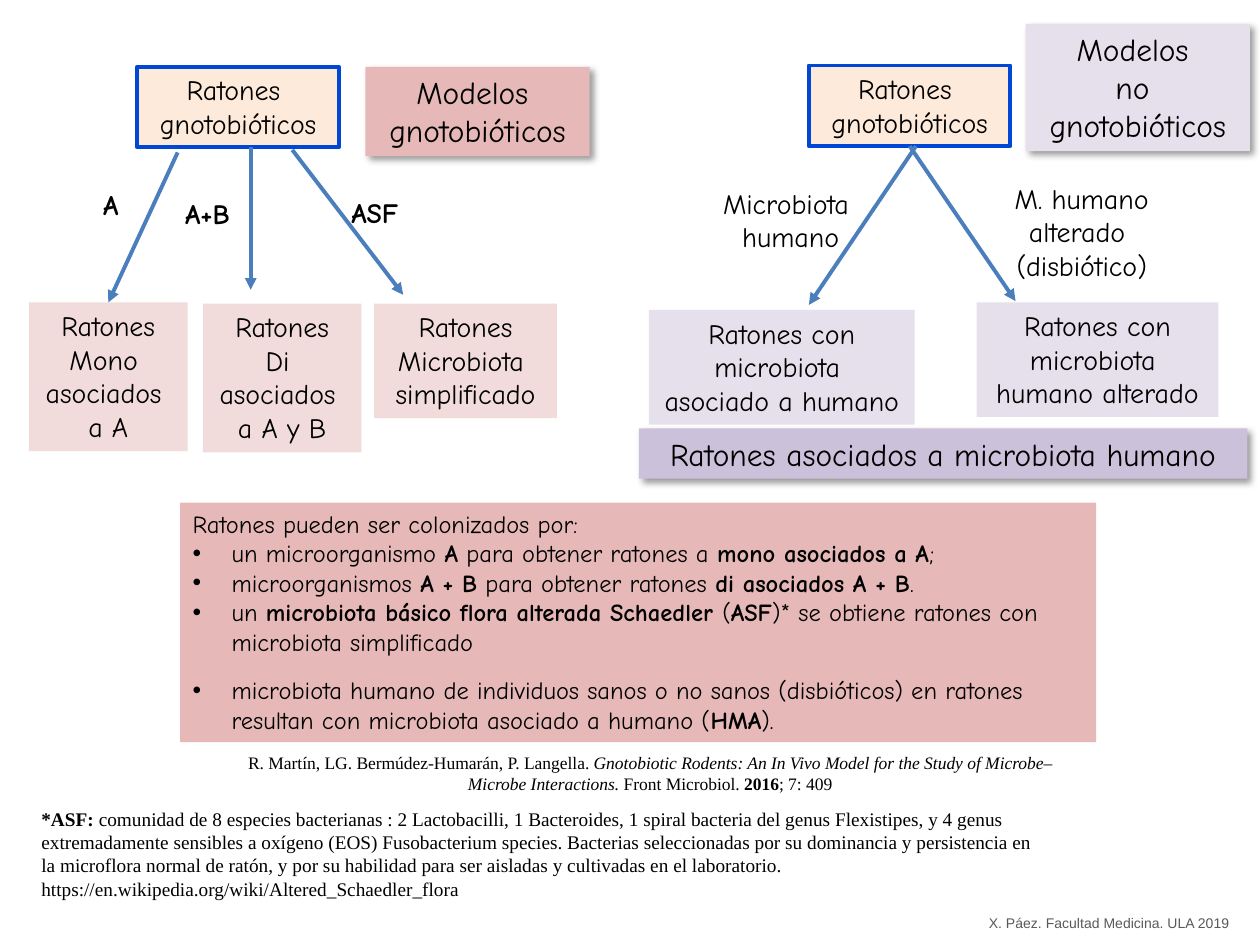
"""Build the slide on gnotobiotic and non-gnotobiotic mouse models."""
from dataclasses import dataclass
from typing import Any, Optional

import lxml.etree
import pptx
import pptx.dml.color
import pptx.enum.shapes
import pptx.enum.text
import pptx.oxml.ns
import pptx.util

Inches = pptx.util.Inches
Pt = pptx.util.Pt
qn = pptx.oxml.ns.qn
ALIGN = pptx.enum.text.PP_ALIGN
HUES = {
    "black": "000000", "gray": "595959", "rose": "E6B9B8", "pink": "F2DCDB",
    "peach": "FDEADA", "lilac": "E6E0EC", "purple": "CCC1DA",
    "edge": "0047D6", "arrow": "4B7EBC",
}
COMIC = "Comic Neue"
TIMES = "Times New Roman"


@dataclass(frozen=True)
class Box:
    """A block of text; bars mark bold runs and tildes mark italic runs."""
    x: float
    y: float
    w: float
    h: float
    lines: tuple[str, ...]
    fill: Optional[str] = None
    edge: Optional[str] = None
    size: int = 16
    font: str = COMIC
    hue: str = "black"
    mid: bool = True
    wrap: bool = False
    shade: bool = False


@dataclass(frozen=True)
class Arrow:
    """An arrow with the boxes it may be joined to."""
    x1: float
    y1: float
    x2: float
    y2: float
    start: Optional[Box] = None
    end: Optional[Box] = None


def tint(name: str) -> pptx.dml.color.RGBColor:
    """Look up a colour by name."""
    return pptx.dml.color.RGBColor.from_string(HUES[name])


def apply(thing: Any, form: dict[str, Any]) -> None:
    """Set each format value on the thing."""
    for key, value in form.items():
        setattr(thing, key, value)


def add(node: Any, tag: str, **values: Any) -> Any:
    """Append an XML child with its attributes."""
    child = lxml.etree.SubElement(node, qn(tag))
    for key, value in values.items():
        child.set(key, str(value))
    return child


def cast(shape: Any) -> None:
    """Give the shape a soft shadow to the lower right."""
    glow = shape._element.spPr.find(qn("a:effectLst"))
    outer = add(glow, "a:outerShdw", blurRad=Pt(4), dist=Pt(3),
                dir=45 * 60000, algn="tl", rotWithShape=0)
    add(add(outer, "a:srgbClr", val=HUES["black"]), "a:alpha", val=40000)


def write(para: Any, line: str, box: Box) -> None:
    """Write one marked line into a paragraph."""
    if line.startswith("•"):
        props = para._p.get_or_add_pPr()
        apply_ind = {"marL": Inches(0.31), "indent": -Inches(0.31)}
        for key, value in apply_ind.items():
            props.set(key, str(value))
        add(props, "a:buFont", typeface="Arial")
        add(props, "a:buChar", char="•")
        line = line[1:]
    para.alignment = ALIGN.CENTER if box.mid else ALIGN.LEFT
    for i, part in enumerate(line.split("|")):
        for j, text in enumerate(part.split("~")):
            if text:
                run = para.add_run()
                run.text = text
                apply(run.font, {"name": box.font, "size": Pt(box.size),
                                 "bold": i % 2 == 1, "italic": j % 2 == 1})
                run.font.color.rgb = tint(box.hue)


def draw(slide: Any, box: Box) -> Any:
    """Draw a box, filled or plain, with its text."""
    place = [Inches(n) for n in (box.x, box.y, box.w, box.h)]
    if box.fill:
        kind = pptx.enum.shapes.MSO_SHAPE.RECTANGLE
        shape = slide.shapes.add_shape(kind, *place)
        shape.shadow.inherit = False
        shape.fill.solid()
        shape.fill.fore_color.rgb = tint(box.fill)
        if box.edge:
            shape.line.color.rgb = tint(box.edge)
            shape.line.width = Pt(2.25)
        else:
            shape.line.fill.background()
        if box.shade:
            cast(shape)
    else:
        shape = slide.shapes.add_textbox(*place)
    frame = shape.text_frame
    apply(frame, {
        "word_wrap": box.wrap,
        "auto_size": pptx.enum.text.MSO_AUTO_SIZE.SHAPE_TO_FIT_TEXT,
        "vertical_anchor": pptx.enum.text.MSO_ANCHOR.TOP,
    })
    for n, line in enumerate(box.lines):
        write(frame.add_paragraph() if n else frame.paragraphs[0], line, box)
    return shape


def link(slide: Any, arrow: Arrow, drawn: dict[Box, Any]) -> None:
    """Draw an arrow and join it to its boxes."""
    kind = pptx.enum.shapes.MSO_CONNECTOR.STRAIGHT
    ends = [Inches(n) for n in (arrow.x1, arrow.y1, arrow.x2, arrow.y2)]
    line = slide.shapes.add_connector(kind, *ends)
    if arrow.start:
        line.begin_connect(drawn[arrow.start], 2)
    if arrow.end:
        line.end_connect(drawn[arrow.end], 0)
    line.line.color.rgb = tint("arrow")
    line.line.width = Pt(2.25)
    add(line.line._get_or_add_ln(), "a:tailEnd", type="triangle")
    add(line._element.spPr, "a:effectLst")


MICE = ("Ratones ", "gnotobióticos")
LEFT = Box(1.09, 0.53, 1.6, 0.64, MICE, "peach", "edge")
RIGHT = Box(6.42, 0.52, 1.6, 0.64, MICE, "peach", "edge")
MONO = Box(0.23, 2.4, 1.26, 1.18,
           ("Ratones", "Mono ", "asociados ", "a A"), "pink")
NOTE = Box(1.43, 3.99, 7.27, 1.9, (
    "Ratones pueden ser colonizados por:",
    "•un microorganismo |A| para obtener ratones a |mono asociados a A|;",
    "•microorganismos |A + B| para obtener ratones |di asociados A + B|.",
    "•un |microbiota básico flora alterada Schaedler |(|ASF|)* se obtiene "
    "ratones con microbiota simplificado",
    "•microbiota humano de individuos sanos o no sanos (disbióticos) en "
    "ratones resultan con microbiota asociado a humano (|HMA|).",
), "rose", size=14, mid=False, wrap=True)
BOXES = (
    NOTE, LEFT, RIGHT, MONO,
    Box(1.61, 2.41, 1.26, 1.18,
        ("Ratones", "Di ", "asociados ", "a A y B"), "pink"),
    Box(2.97, 2.41, 1.45, 0.91,
        ("Ratones", "Microbiota ", "simplificado"), "pink"),
    Box(5.15, 2.46, 2.11, 0.91,
        ("Ratones con", "microbiota ", "asociado a humano"), "lilac"),
    Box(7.75, 2.4, 1.92, 0.91,
        ("Ratones con", "microbiota ", "humano alterado"), "lilac"),
    Box(5.07, 3.4, 4.83, 0.4, ("Ratones asociados a microbiota humano",),
        "purple", size=18, shade=True),
    Box(2.9, 0.53, 1.78, 0.71, ("Modelos ", "gnotobióticos"),
        "rose", size=18, shade=True),
    Box(8.14, 0.19, 1.78, 1.01, ("Modelos ", "no ", "gnotobióticos"),
        "lilac", size=18, shade=True),
)
ARROWS = (
    Arrow(1.41, 1.21, 0.86, 2.4, end=MONO),
    Arrow(1.99, 1.17, 1.99, 2.3),
    Arrow(2.32, 1.19, 3.2, 2.34),
    Arrow(7.27, 1.16, 6.42, 2.42),
    Arrow(7.22, 1.16, 8.06, 2.39, start=RIGHT),
)
LABELS = (
    Box(0.72, 1.44, 0.37, 0.37, ("|A|",), mid=False),
    Box(1.37, 1.51, 0.65, 0.37, ("|A+B|",), mid=False),
    Box(2.69, 1.5, 0.66, 0.37, ("|ASF|",), mid=False),
    Box(5.57, 1.43, 1.41, 0.64, ("Microbiota ", "humano")),
    Box(7.89, 1.39, 1.39, 0.91, ("M. humano", "alterado ", "(disbiótico)")),
    Box(1.69, 5.92, 6.94, 0.44, (
        "R. Martín, LG. Bermúdez-Humarán, P. Langella. ~Gnotobiotic Rodents: "
        "An In Vivo Model for the Study of Microbe–Microbe Interactions. ~"
        "Front Microbiol. |2016|; 7: 409",), size=10, font=TIMES, wrap=True),
    Box(0.23, 6.36, 8.16, 0.84, (
        "|*ASF: |comunidad de 8 especies bacterianas : 2 Lactobacilli, "
        "1 Bacteroides, 1 spiral bacteria del genus Flexistipes, y 4 genus "
        "extremadamente sensibles a oxígeno (EOS) Fusobacterium species. "
        "Bacterias seleccionadas por su dominancia y persistencia en la "
        "microflora normal de ratón, y por su habilidad para ser aisladas y "
        "cultivadas en el laboratorio.",
        "https://en.wikipedia.org/wiki/Altered_Schaedler_flora",
    ), size=11, font=TIMES, mid=False, wrap=True),
    Box(7.75, 7.21, 2.14, 0.24, ("X. Páez. Facultad Medicina. ULA 2019",),
        size=8, font="Arial", hue="gray", mid=False),
)


def main() -> None:
    """Build and save the deck."""
    deck = pptx.Presentation()
    apply(deck, {"slide_width": Inches(10), "slide_height": Inches(7.5)})
    slide = deck.slides.add_slide(deck.slide_layouts[6])
    drawn = {box: draw(slide, box) for box in BOXES}
    drawn[NOTE].text_frame.paragraphs[-1].space_before = Pt(11)
    for arrow in ARROWS:
        link(slide, arrow, drawn)
    for label in LABELS:
        draw(slide, label)
    deck.save("out.pptx")


if __name__ == "__main__":
    main()
